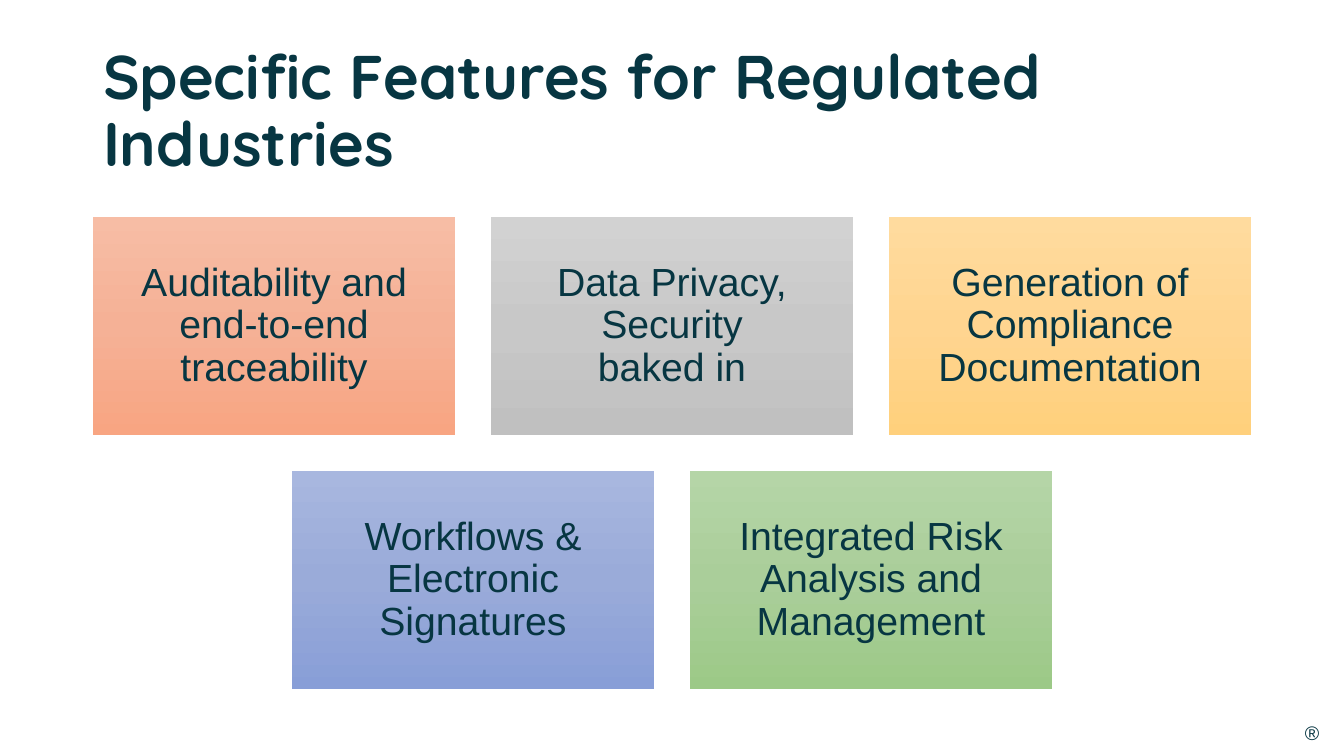
from copy import deepcopy

from pptx import Presentation, util as u
from pptx.dml.color import RGBColor
from pptx.enum import shapes, text
from pptx.oxml.ns import qn

PX = 914400 / 100.8
WIDTH, HEIGHT = 1344, 756
CARD_WIDTH, CARD_HEIGHT, GAP, TOP = 362, 218, 36, 217
ROWS = [
    [
        ("Auditability and end-to-end traceability", ("F7BDA5", "F5B196", "F8A582")),
        ("Data Privacy, Security\nbaked in", ("D2D2D2", "C8C8C8", "C0C0C0")),
        ("Generation of Compliance Documentation", ("FFDB9E", "FFD590", "FFD07C")),
    ],
    [
        ("Workflows & Electronic Signatures", ("A8B7DF", "9AABD9", "889ED7")),
        ("Integrated Risk Analysis and Management", ("B5D5A7", "AACE9A", "9CC987")),
    ],
]


def px(value):
    return u.Emu(round(value * PX))


def color(code):
    return RGBColor.from_string(code)


def assign(target, values):
    for name, value in values.items():
        setattr(target, name, value)


class Board:
    ink = "073642"
    heading = {"name": "Quicksand", "size": u.Pt(44), "bold": True}
    body = {"name": "Arial", "size": u.Pt(28)}
    mark_font = {"name": "Arial", "size": u.Pt(14)}

    def __init__(self, deck):
        self.page = deck.slides.add_slide(deck.slide_layouts[5])

    def label(self, shape, words, font, align, inset, wrap=True):
        frame = shape.text_frame
        assign(frame, {
            "word_wrap": wrap,
            "auto_size": text.MSO_AUTO_SIZE.NONE,
            "vertical_anchor": text.MSO_ANCHOR.MIDDLE,
        })
        if inset is not None:
            sides = ("left", "top", "right", "bottom")
            assign(frame, {f"margin_{side}": px(inset) for side in sides})
        para = frame.paragraphs[0]
        para.text = words
        assign(para, {"alignment": align, "line_spacing": 0.9})
        for span in para.runs:
            assign(span.font, font)
            span.font.color.rgb = color(self.ink)

    def title(self, words, left, top, width, height):
        holder = self.page.shapes.title
        assign(holder, {"left": px(left), "top": px(top),
                        "width": px(width), "height": px(height)})
        self.label(holder, words, self.heading, text.PP_ALIGN.LEFT, None)

    def card(self, words, shades, left, top):
        box = self.page.shapes.add_shape(
            shapes.MSO_SHAPE.RECTANGLE,
            px(left), px(top), px(CARD_WIDTH), px(CARD_HEIGHT))
        box.shadow.inherit = False
        box.line.fill.background()
        box.fill.gradient()
        box.fill.gradient_angle = 270
        stops = box.element.spPr.find(".//" + qn("a:gsLst"))
        stops.insert(1, deepcopy(stops[0]))
        for index, (stop, shade) in enumerate(zip(box.fill.gradient_stops, shades)):
            stop.position = index / 2
            stop.color.rgb = color(shade)
        self.label(box, words, self.body, text.PP_ALIGN.CENTER, 12)

    def mark(self, words, left, top, width, height):
        box = self.page.shapes.add_textbox(px(left), px(top), px(width), px(height))
        self.label(box, words, self.mark_font, text.PP_ALIGN.LEFT, 0, wrap=False)


def main():
    deck = Presentation()
    deck.slide_width, deck.slide_height = px(WIDTH), px(HEIGHT)
    board = Board(deck)
    board.title("Specific Features for Regulated Industries", 93, 40, 1159, 146)
    for row, cards in enumerate(ROWS):
        row_width = len(cards) * (CARD_WIDTH + GAP) - GAP
        start = (WIDTH - row_width) // 2
        for column, (words, shades) in enumerate(cards):
            board.card(words, shades,
                       start + column * (CARD_WIDTH + GAP),
                       TOP + row * (CARD_HEIGHT + GAP))
    board.mark("®", 1305, 722, 18, 24)
    deck.save("out.pptx")


if __name__ == "__main__":
    main()
